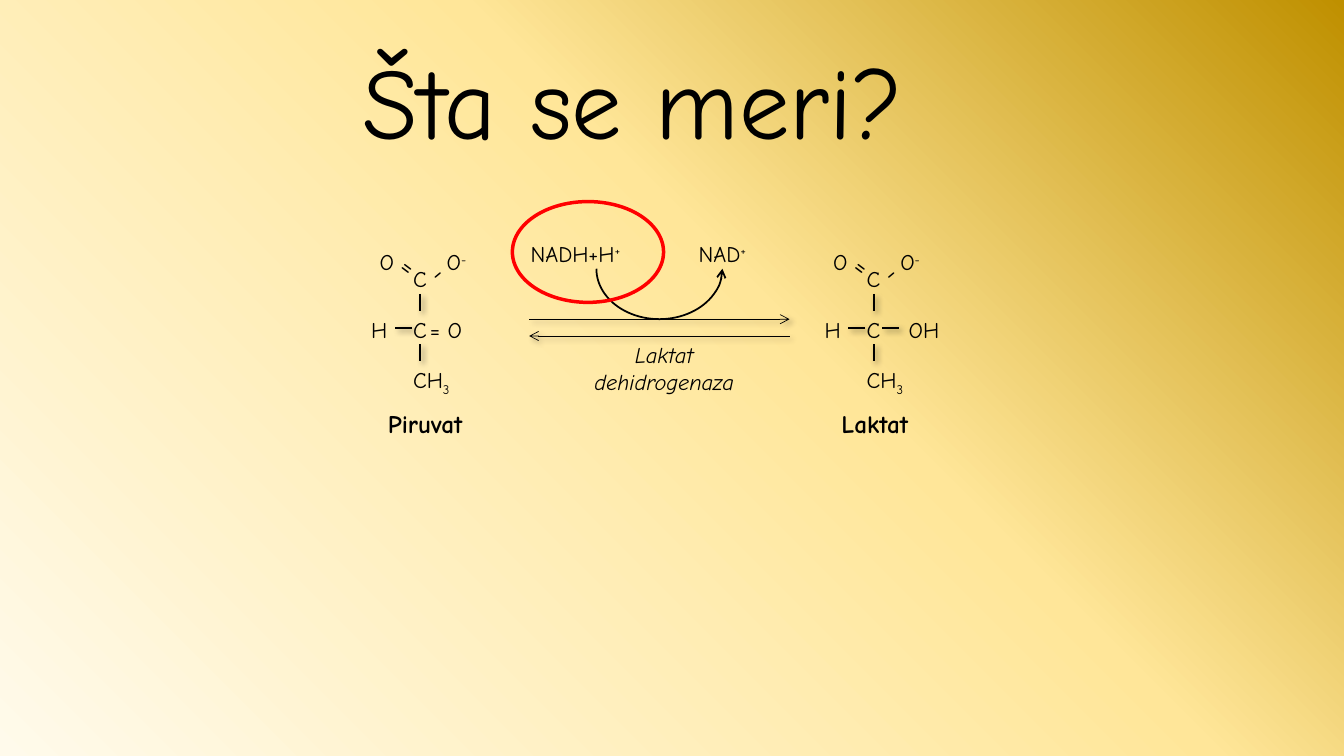
from copy import deepcopy

from lxml import etree
from pptx import Presentation
from pptx.dml.color import RGBColor
from pptx.enum.shapes import MSO_CONNECTOR, MSO_SHAPE
from pptx.enum.text import MSO_ANCHOR, MSO_AUTO_SIZE, PP_ALIGN
from pptx.oxml.ns import qn
from pptx.util import Pt

PX = 9525
FONT = "Comic Neue"
BLACK = RGBColor(0x00, 0x00, 0x00)
RED = RGBColor(0xFF, 0x00, 0x00)
BACKDROP = [(0, RGBColor(0xFF, 0xFA, 0xEB)),
            (0.58, RGBColor(0xFF, 0xE6, 0x99)),
            (1, RGBColor(0xBF, 0x90, 0x00))]
STRAIGHT = MSO_CONNECTOR.STRAIGHT
ARC, OVAL = MSO_SHAPE.ARC, MSO_SHAPE.OVAL
TOP = MSO_ANCHOR.TOP
NO_FIT, GROW = MSO_AUTO_SIZE.NONE, MSO_AUTO_SIZE.SHAPE_TO_FIT_TEXT
LEFT, CENTER = PP_ALIGN.LEFT, PP_ALIGN.CENTER
SUBSCRIPT, SUPERSCRIPT = -25000, 30000


def px(*lengths):
    return [length * PX for length in lengths]


def style(para, size, align=LEFT, bold=False, italic=False):
    para.alignment = align
    font = para.font
    font.name, font.size = FONT, Pt(size)
    font.bold, font.italic = bold, italic
    font.color.rgb = BLACK


def label(shapes, box, text, script="", shift=0, size=16, turn=0, **look):
    """Add an unwrapped text, with an optional raised or lowered ending."""
    holder = shapes.add_textbox(*px(*box))
    holder.rotation = turn
    frame = holder.text_frame
    frame.word_wrap = False
    frame.auto_size = GROW
    frame.text = text
    for para in frame.paragraphs:
        style(para, size, **look)
    if script:
        span = frame.paragraphs[-1].add_run()
        span.text = script
        span.font._element.set("baseline", str(shift))


def add_arrowhead(shape, end):
    outline = shape.line._get_or_add_ln()
    etree.SubElement(outline, qn(f"a:{end}"), type="arrow")


def shadowed_line(shapes, start, end, width, arrow=None):
    line = shapes.add_connector(STRAIGHT, *px(*start, *end))
    line.line.color.rgb = BLACK
    line.line.width = Pt(width)
    if arrow:
        add_arrowhead(line, arrow)
    effects = etree.SubElement(line.element.spPr, qn("a:effectLst"))
    shadow = etree.SubElement(effects, qn("a:outerShdw"), blurRad=str(Pt(4)),
                              dist=str(Pt(3)), dir="2700000")
    color = etree.SubElement(shadow, qn("a:srgbClr"), val=str(BLACK))
    etree.SubElement(color, qn("a:alpha"), val="40000")


def outline_shape(page, kind, box, color, width):
    shape = page.shapes.add_shape(kind, *px(*box))
    shape.shadow.inherit = False
    shape.fill.background()
    shape.line.color.rgb = color
    shape.line.width = Pt(width)
    return shape


def draw_backdrop(page):
    fill = page.background.fill
    fill.gradient()
    fill.gradient_angle = 45
    stop_list = page.element.find(f".//{qn('a:gsLst')}")
    stop_list.append(deepcopy(stop_list[-1]))
    for stop, (position, color) in zip(fill.gradient_stops, BACKDROP):
        stop.position = position
        stop.color.rgb = color


def draw_title(page, box):
    title = page.shapes.title
    title.left, title.top, title.width, title.height = px(*box)
    frame = title.text_frame
    frame.word_wrap = False
    frame.auto_size = NO_FIT
    frame.vertical_anchor = TOP
    frame.text = "Šta se meri?"
    style(frame.paragraphs[0], 72)


def draw_molecule(page, left, top, name, name_width, side_group, right_bond):
    """Draw a three-carbon acid; side_group is (text, offset, width)."""
    shapes = page.shapes.add_group_shape().shapes
    side_text, side_offset, side_width = side_group
    atoms = [
        ("C", 40, 16, 33, "", 0),
        ("C", 40, 64, 33, "", 0),
        ("CH", 40, 112, 58, "3", SUBSCRIPT),
        ("H", 0, 64, 36, "", 0),
        ("O", 8, 0, 36, "", 0),
        ("O", 72, 0, 42, "-", SUPERSCRIPT),
        (side_text, side_offset, 64, side_width, "", 0),
    ]
    bonds = [(56, 48, 56, 64), (56, 96, 56, 112), (48, 80, 32, 80)]
    if right_bond:
        bonds.append((80, 80, 64, 80))
    for x1, y1, x2, y2 in bonds:
        shadowed_line(shapes, (left + x1, top + y1), (left + x2, top + y2), 1.5)
    for text, x, y, width, script, shift in atoms:
        label(shapes, (left + x, top + y, width, 36), text, script, shift)
    for text, x, width, turn in [("=", 24, 32, 217), ("-", 56, 30, 320)]:
        label(shapes, (left + x, top + 8, width, 38), text, size=18, turn=turn)
    label(shapes, (left + 16, top + 152, name_width, 38), name, size=18, bold=True)


def draw_reaction(page, left, top):
    shapes = page.shapes
    right = left + 248
    for y, arrow in [(112, "tailEnd"), (128, "headEnd")]:
        shadowed_line(shapes, (left, top + y), (right, top + y), 0.5, arrow)
    for text, x, width in [("NADH+H", -8, 122), ("NAD", 152, 75)]:
        label(shapes, (left + x, top + 32, width, 36), text, "+", SUPERSCRIPT)
    label(shapes, (left + 47, top + 128, 163, 61), "Laktat\ndehidrogenaza",
          align=CENTER, italic=True)
    arc = outline_shape(page, ARC, (left + 64, top + 16, 120, 96), BLACK, 1.25)
    arc.adjustments[0], arc.adjustments[1] = 0, 108
    add_arrowhead(arc, "headEnd")
    outline_shape(page, OVAL, (left - 16, top, 144, 96), RED, 2.5)


def main():
    deck = Presentation()
    deck.slide_width, deck.slide_height = px(1280, 720)
    page = deck.slides.add_slide(deck.slide_layouts[5])
    draw_backdrop(page)
    draw_title(page, (336, 32, 617, 126))
    draw_molecule(page, 344, 232, "Piruvat", 99, ("= O", 56, 54), False)
    draw_molecule(page, 776, 232, "Laktat", 95, ("OH", 80, 53), True)
    draw_reaction(page, 504, 192)
    deck.save("out.pptx")


if __name__ == "__main__":
    main()
